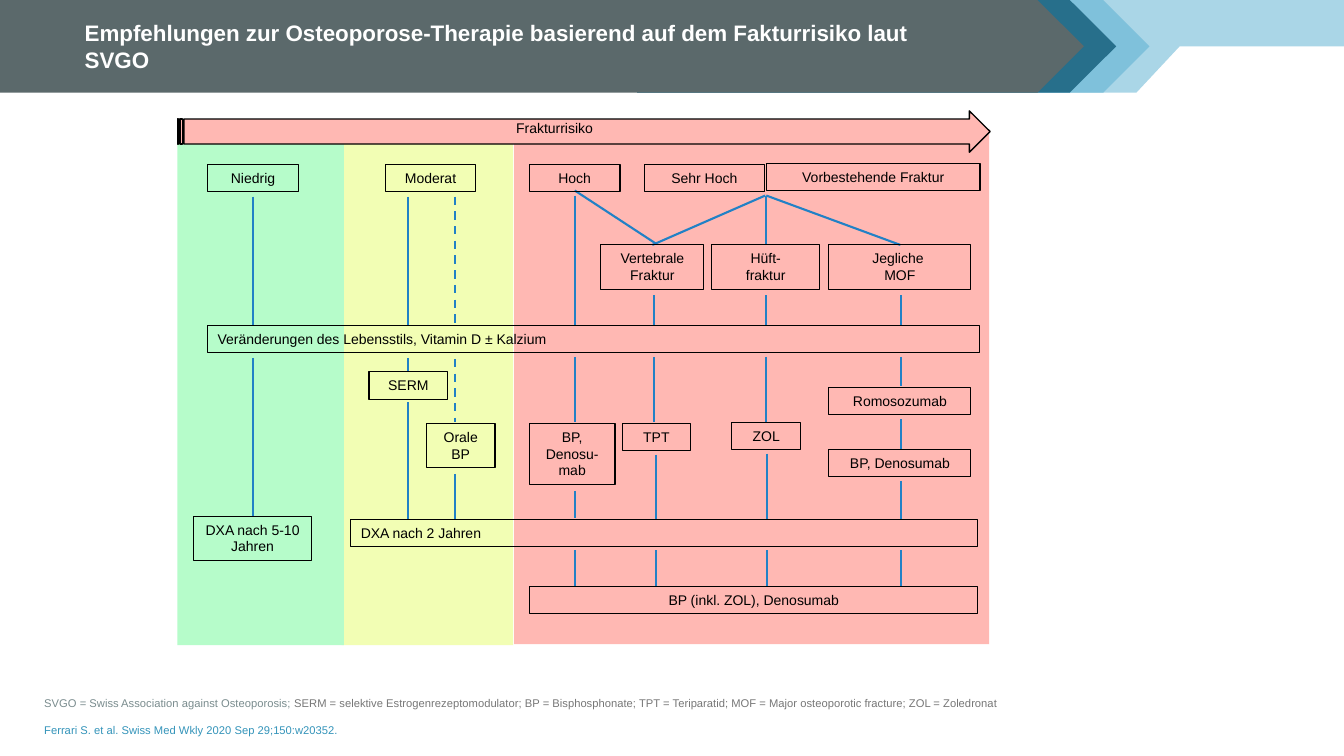
import pptx
import pptx.dml.color
import pptx.enum.dml
import pptx.enum.shapes
import pptx.enum.text
import pptx.oxml.ns
import pptx.util
from lxml import etree

RGBColor = pptx.dml.color.RGBColor
MSO_SHAPE = pptx.enum.shapes.MSO_SHAPE
PP_ALIGN = pptx.enum.text.PP_ALIGN
MSO_ANCHOR = pptx.enum.text.MSO_ANCHOR

WHITE = RGBColor(0xFF, 0xFF, 0xFF)
BLACK = RGBColor(0x00, 0x00, 0x00)
PALE_BLUE = RGBColor(0xAA, 0xD6, 0xE7)
LIGHT_BLUE = RGBColor(0x7F, 0xC1, 0xDB)
DEEP_BLUE = RGBColor(0x27, 0x6F, 0x8B)
SLATE = RGBColor(0x5B, 0x69, 0x6B)
RED = RGBColor(0xFF, 0xB8, 0xB3)
YELLOW = RGBColor(0xF2, 0xFE, 0xB4)
GREEN = RGBColor(0xB6, 0xFC, 0xCA)
LINE_BLUE = RGBColor(0x21, 0x81, 0xC6)
GREY_GREEN = RGBColor(0x7A, 0x8C, 0x8E)
GREY = RGBColor(0x77, 0x77, 0x77)
LINK_BLUE = RGBColor(0x34, 0x94, 0xBA)

PX = 9144
BAND_H = 92

ZONES = [
    (510, 128, 471, 511, RED),
    (339, 121, 170, 519, YELLOW),
    (176, 121, 165, 519, GREEN),
]
VERTICALS = {
    251: [(195, 323), (355, 513)],
    405: [(195, 323), (355, 368), (399, 516)],
    451: [(470, 516)],
    570: [(194, 322), (354, 419), (487, 514), (546, 581)],
    649: [(293, 322), (354, 419)],
    651: [(451, 516), (546, 581)],
    760: [(194, 243), (293, 322), (354, 419)],
    761: [(450, 515), (546, 581)],
    894: [(293, 322), (354, 383), (416, 445), (477, 515), (546, 581)],
}
DASHES = [(195, 323), (356, 419)]
BRANCHES = [
    (759, 194, 647, 243),
    (651, 242, 570, 189),
    (893, 243, 760, 194),
]
BOXES = [
    (206, 163, 90, 27, "Niedrig"),
    (382, 163, 90, 27, "Moderat"),
    (525, 163, 90, 27, "Hoch"),
    (639, 163, 119, 27, "Sehr Hoch"),
    (760, 162, 212, 27, "Vorbestehende Fraktur"),
    (596, 243, 102, 44, "Vertebrale Fraktur"),
    (706, 243, 107, 44, "Hüft-\nfraktur"),
    (822, 243, 141, 44, "Jegliche \nMOF"),
    (366, 369, 78, 27, "SERM"),
    (423, 420, 68, 44, "Orale BP"),
    (525, 420, 85, 61, "BP, Denosu-mab"),
    (617, 420, 68, 27, "TPT"),
    (726, 419, 68, 27, "ZOL"),
    (822, 384, 141, 27, "Romosozumab"),
    (822, 446, 141, 27, "BP, Denosumab"),
    (192, 512, 117, 44, "DXA nach 5-10 Jahren"),
    (525, 582, 445, 27, "BP (inkl. ZOL), Denosumab"),
]
BARS = [
    (206, 323, 766, 27, "Veränderungen des Lebensstils, Vitamin D ± Kalzium"),
    (348, 515, 622, 27, "DXA nach 2 Jahren"),
]
NOTES = [
    [("SVGO = Swiss Association against Osteoporosis; ", GREY_GREEN),
     ("SERM = selektive Estrogenrezeptomodulator; BP = Bisphosphonate; "
      "TPT = Teriparatid; MOF = Major osteoporotic fracture; ZOL = Zoledronat", GREY)],
    [("Ferrari S. et al. Swiss Med Wkly 2020 Sep 29;150:w20352.", LINK_BLUE)],
]


class Deck:
    """Holds the text style and the current slide, and draws each kind of element."""

    def __init__(self, font, size):
        self.font, self.size = font, size
        self.prs = pptx.Presentation()
        self.prs.slide_width, self.prs.slide_height = self.emu(1333, 750)
        self.s = self.prs.slides.add_slide(self.prs.slide_layouts[5])

    def emu(self, *lengths):
        return [pptx.util.Emu(n * PX) for n in lengths]

    def format_run(self, r, size, color, bold=False):
        r.font.name, r.font.size, r.font.bold = self.font, pptx.util.Pt(size), bold
        r.font.color.rgb = color

    def paint(self, sp, fill, line):
        sp.shadow.inherit = False
        if fill is None:
            sp.fill.background()
        else:
            sp.fill.solid()
            sp.fill.fore_color.rgb = fill
        if line is None:
            sp.line.fill.background()
        else:
            sp.line.color.rgb = BLACK
            sp.line.width = pptx.util.Pt(line)
        return sp

    def shape(self, kind, x, y, w, h, fill=None, line=None):
        return self.paint(self.s.shapes.add_shape(kind, *self.emu(x, y, w, h)), fill, line)

    def outline(self, points, fill):
        fb = self.s.shapes.build_freeform(*points[0], scale=PX)
        fb.add_line_segments(points[1:], close=True)
        self.paint(fb.convert_to_shape(), fill, None)

    def box(self, x, y, w, h, text, align=PP_ALIGN.CENTER, line=0.75):
        tf = self.shape(MSO_SHAPE.RECTANGLE, x, y, w, h, line=line).text_frame
        tf.word_wrap, tf.vertical_anchor = True, MSO_ANCHOR.TOP
        tf.text = text
        for p in tf.paragraphs:
            p.alignment = align
            self.format_run(p.runs[0], self.size, BLACK)

    def line(self, x1, y1, x2, y2, dashed=False):
        c = self.s.shapes.add_connector(
            pptx.enum.shapes.MSO_CONNECTOR.STRAIGHT, *self.emu(x1, y1, x2, y2))
        c.line.color.rgb, c.line.width = LINE_BLUE, pptx.util.Pt(1.5)
        if dashed:
            c.line.dash_style = pptx.enum.dml.MSO_LINE.DASH
        sp_pr = c.element.find(pptx.oxml.ns.qn("p:spPr"))
        etree.SubElement(sp_pr, pptx.oxml.ns.qn("a:effectLst"))

    def title(self, x, y, w, h, text, size):
        sp = self.s.shapes.title
        sp.left, sp.top, sp.width, sp.height = self.emu(x, y, w, h)
        sp.element.getparent().append(sp.element)
        tf = sp.text_frame
        tf.text, tf.word_wrap, tf.vertical_anchor = text, True, MSO_ANCHOR.MIDDLE
        p = tf.paragraphs[0]
        p.alignment = PP_ALIGN.LEFT
        self.format_run(p.runs[0], size, WHITE, bold=True)

    def notes(self, x, y, w, h, paragraphs, size, gap):
        tf = self.s.shapes.add_textbox(*self.emu(x, y, w, h)).text_frame
        tf.word_wrap = True
        for i, parts in enumerate(paragraphs):
            p = tf.add_paragraph() if i else tf.paragraphs[0]
            p.space_before = pptx.util.Pt(gap if i else 0)
            for text, color in parts:
                r = p.add_run()
                r.text = text
                self.format_run(r, size, color)


def main():
    deck = Deck("Arial", 10)
    deck.outline([(632, 92), (1127, 92), (1170, 46), (1333, 46), (1333, 0), (632, 0)], PALE_BLUE)
    for x, w, color in [(632, 508, LIGHT_BLUE), (632, 475, DEEP_BLUE), (0, 1075, SLATE)]:
        deck.shape(MSO_SHAPE.PENTAGON, x, 0, w, BAND_H, color)
    deck.title(74, 12, 893, 67, "Empfehlungen zur Osteoporose-Therapie basierend "
               "auf dem Fakturrisiko laut SVGO", 16)
    deck.notes(34, 686, 1046, 50, NOTES, 8, 9.5)

    for *frame, color in ZONES:
        deck.shape(MSO_SHAPE.RECTANGLE, *frame, color)
    arrow = deck.shape(MSO_SHAPE.STRIPED_RIGHT_ARROW, 176, 110, 806, 41, RED, 1)
    arrow.adjustments[0] = 0.605
    deck.box(355, 114, 390, 27, "Frakturrisiko", line=None)

    for x, spans in VERTICALS.items():
        for top, bottom in spans:
            deck.line(x, top, x, bottom)
    for top, bottom in DASHES:
        deck.line(451, top, 451, bottom, dashed=True)
    for branch in BRANCHES:
        deck.line(*branch)
    for box in BOXES:
        deck.box(*box)
    for bar in BARS:
        deck.box(*bar, align=PP_ALIGN.LEFT)
    deck.prs.save("out.pptx")


if __name__ == "__main__":
    main()
